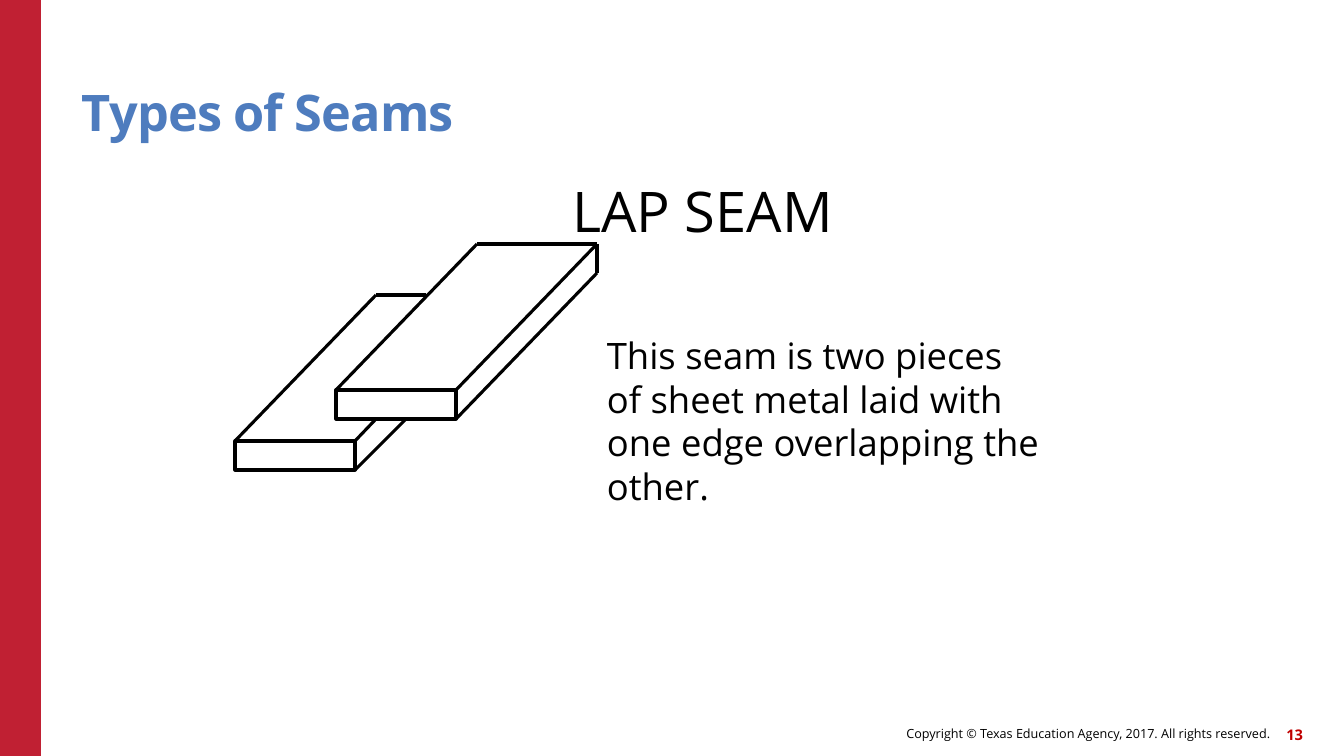
import dataclasses

import pptx
import pptx.dml.color
import pptx.enum.shapes
import pptx.enum.text
import pptx.oxml.ns
import pptx.util
from lxml import etree

EMU_PER_PX = 914400 / 100.8
ALIGN = pptx.enum.text.PP_ALIGN
ANCHOR = pptx.enum.text.MSO_ANCHOR


@dataclasses.dataclass(frozen=True)
class Theme:
    font: str = "Open Sans"
    bar: str = "C02033"
    title: str = "4E7CBE"
    number: str = "C00000"
    ink: str = "000000"
    title_size: float = 36
    heading_size: float = 40
    body_size: float = 26
    copyright_size: float = 9
    number_size: float = 10.5
    line_width: float = 2.25


THEME = Theme()


def px(n):
    return pptx.util.Emu(round(n * EMU_PER_PX))


def rgb(color):
    return pptx.dml.color.RGBColor.from_string(color)


def add_rect(slide, x, y, w, h, fill=None, line=None):
    sp = slide.shapes.add_shape(
        pptx.enum.shapes.MSO_SHAPE.RECTANGLE, px(x), px(y), px(w), px(h))
    sp.shadow.inherit = False
    if fill:
        sp.fill.solid()
        sp.fill.fore_color.rgb = rgb(fill)
    else:
        sp.fill.background()
    if line:
        sp.line.color.rgb = rgb(line)
        sp.line.width = pptx.util.Pt(THEME.line_width)
    else:
        sp.line.fill.background()
    return sp


def add_line(slide, x1, y1, x2, y2):
    cxn = slide.shapes.add_connector(
        pptx.enum.shapes.MSO_CONNECTOR.STRAIGHT, px(x1), px(y1), px(x2), px(y2))
    cxn.line.color.rgb = rgb(THEME.ink)
    cxn.line.width = pptx.util.Pt(THEME.line_width)
    etree.SubElement(cxn._element.spPr, pptx.oxml.ns.qn("a:effectLst"))


def add_text(slide, x, y, w, h, text, size, color=THEME.ink, bold=False,
             align=ALIGN.LEFT, anchor=ANCHOR.TOP, inset=True):
    tf = slide.shapes.add_textbox(px(x), px(y), px(w), px(h)).text_frame
    tf.word_wrap = True
    tf.vertical_anchor = anchor
    if not inset:
        tf.margin_left = tf.margin_top = tf.margin_right = tf.margin_bottom = 0
    p = tf.paragraphs[0]
    p.text = text
    p.alignment = align
    font = p.runs[0].font
    font.name = THEME.font
    font.size = pptx.util.Pt(size)
    font.bold = bold
    font.color.rgb = rgb(color)
    return p


def add_sheet(slide, x, y, edges):
    add_rect(slide, x, y, 120, 29, line=THEME.ink)
    for x1, y1, x2, y2 in edges:
        add_line(slide, x + x1, y + y1, x + x2, y + y2)


def add_lap_seam(slide):
    add_sheet(slide, 336, 390, [
        (120, 29, 261, -117),
        (120, 0, 261, -146),
        (0, 0, 141, -146),
        (141, -146, 261, -146),
        (261, -146, 261, -117),
    ])
    add_sheet(slide, 235, 441, [
        (0, 0, 141, -146),
        (120, 0, 141, -22),
        (120, 29, 171, -22),
        (141, -146, 191, -146),
    ])


def add_footer(slide):
    add_text(slide, 619, 718, 651, 32,
             "Copyright © Texas Education Agency, 2017. All rights reserved.",
             THEME.copyright_size, align=ALIGN.RIGHT, anchor=ANCHOR.MIDDLE,
             inset=False)
    add_text(slide, 1261, 719, 42, 32, "13", THEME.number_size, THEME.number,
             bold=True, align=ALIGN.RIGHT, anchor=ANCHOR.MIDDLE, inset=False)


def add_title(slide):
    p = add_text(slide, 82, 45, 1109, 97, "Types of Seams", THEME.title_size,
                 THEME.title, bold=True, anchor=ANCHOR.BOTTOM, inset=False)
    p.line_spacing = 0.9
    p.runs[0].font._element.set("spc", "-60")


def main():
    prs = pptx.Presentation()
    prs.slide_width = px(1344)
    prs.slide_height = px(756)
    slide = prs.slides.add_slide(prs.slide_layouts[6])
    add_rect(slide, 0, 0, 41, 756, fill=THEME.bar)
    add_footer(slide)
    add_title(slide)
    add_lap_seam(slide)
    add_text(slide, 537, 172, 331, 78, "LAP SEAM", THEME.heading_size,
             align=ALIGN.CENTER)
    add_text(slide, 597, 328, 454, 186,
             "This seam is two pieces of sheet metal laid with one edge "
             "overlapping the other.", THEME.body_size)
    prs.save("out.pptx")


if __name__ == "__main__":
    main()
